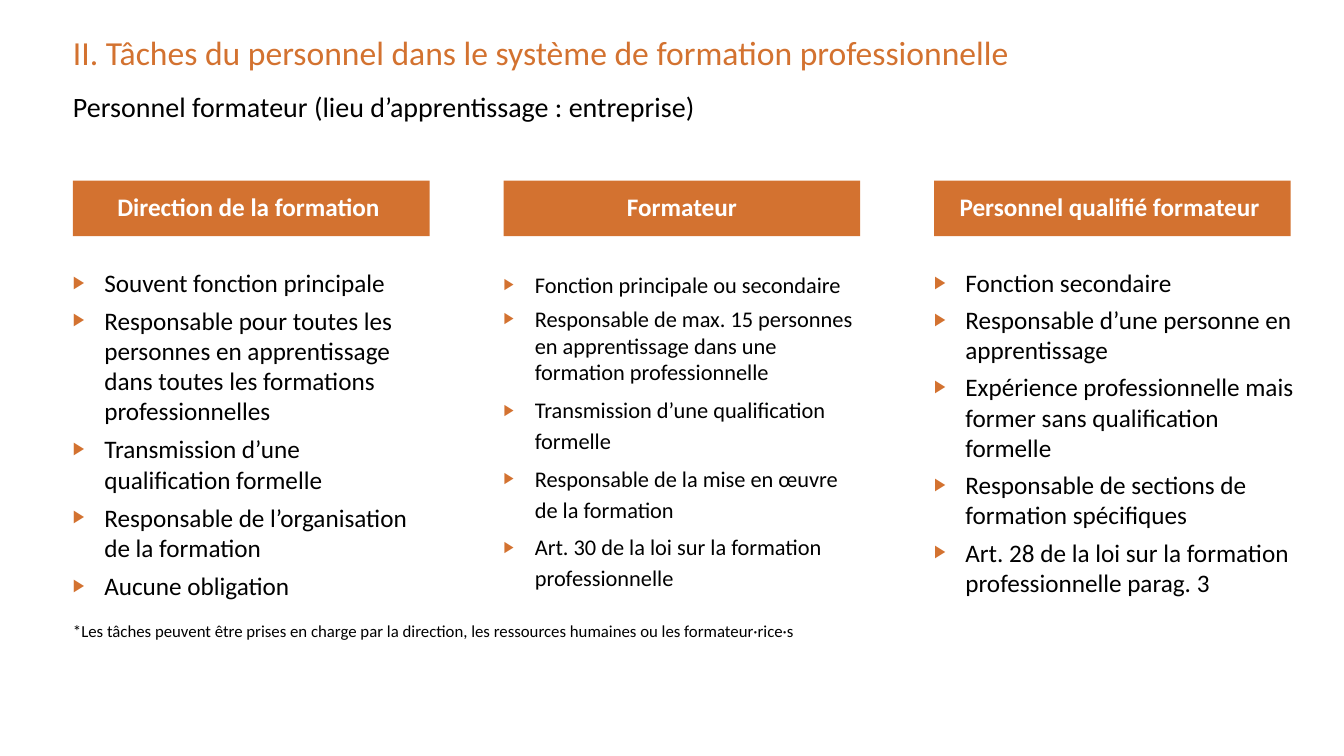
"""Builds the slide on the tasks of training staff in companies."""
from lxml import etree
from pptx import Presentation
from pptx.dml.color import RGBColor
from pptx.enum.shapes import MSO_SHAPE
from pptx.enum.text import MSO_ANCHOR, PP_ALIGN
from pptx.oxml.ns import qn
from pptx.util import Cm, Pt

RECT = MSO_SHAPE.RECTANGLE
MIDDLE = MSO_ANCHOR.MIDDLE
LEFT, CENTER = PP_ALIGN.LEFT, PP_ALIGN.CENTER

COLORS = {"accent": "D37230", "text": "000000", "header": "FFFFFF"}
FONT = "Calibri"

TITLE = "II. Tâches du personnel dans le système de formation professionnelle"
SUBTITLE = "Personnel formateur (lieu d’apprentissage\u00a0: entreprise)"
FOOTNOTE = ("*Les tâches peuvent être prises en charge par la direction, "
            "les ressources humaines ou les formateur·rice·s")

COLUMNS = [
    {"header": "Direction de la formation ", "size": 18, "width": 8.99, "loose": {0, 2, 3, 4},
     "tasks": ["Souvent fonction principale",
               "Responsable pour toutes les personnes en apprentissage "
               "dans toutes les formations professionnelles",
               "Transmission d’une qualification formelle",
               "Responsable de l’organisation de la formation",
               "Aucune obligation"]},
    {"header": "Formateur", "size": 16, "width": 8.99, "loose": {0, 2, 3, 4},
     "tasks": ["Fonction principale ou secondaire",
               "Responsable de max. 15 personnes en apprentissage "
               "dans une formation professionnelle",
               "Transmission d’une qualification formelle",
               "Responsable de la mise en œuvre de la formation",
               "Art. 30 de la loi sur la formation professionnelle"]},
    {"header": "Personnel qualifié formateur ", "size": 18, "width": 9.17, "loose": set(),
     "tasks": ["Fonction secondaire",
               "Responsable d’une personne en apprentissage",
               "Expérience professionnelle mais former sans qualification formelle",
               "Responsable de sections de formation spécifiques",
               "Art. 28 de la loi sur la formation professionnelle parag. 3"]},
]

MARGIN, PITCH, HEADER_WIDTH = 1.84, 10.85, 8.99
HEADER_TOP, HEADER_HEIGHT = 4.55, 1.4
TASKS_TOP, TASKS_HEIGHT = 6.73, 8.1
INDENT = Cm(0.79)


def rgb(name):
    return RGBColor.from_string(COLORS[name])


def fill_text(sp, lines, size, color, bold=False, align=LEFT):
    tf = sp.text_frame
    tf.word_wrap = True
    tf.margin_left = tf.margin_top = tf.margin_right = tf.margin_bottom = 0
    tf.text = "\n".join(lines)
    for p in tf.paragraphs:
        p.alignment = align
        for r in p.runs:
            r.font.name, r.font.size, r.font.bold = FONT, Pt(size), bold
            r.font.color.rgb = rgb(color)
    return tf


def add_text(s, box, lines, size, color="text"):
    sp = s.shapes.add_textbox(*(Cm(v) for v in box))
    return fill_text(sp, lines, size, color)


def add_header(s, left, label):
    box = (left, HEADER_TOP, HEADER_WIDTH, HEADER_HEIGHT)
    sp = s.shapes.add_shape(RECT, *(Cm(v) for v in box))
    sp.shadow.inherit = False
    sp.fill.solid()
    sp.fill.fore_color.rgb = rgb("accent")
    sp.line.fill.background()
    tf = fill_text(sp, [label], 18, "header", True, CENTER)
    tf.vertical_anchor = MIDDLE
    tf.paragraphs[0].line_spacing = 0.9


def add_bullet(p):
    pPr = p._p.get_or_add_pPr()
    pPr.set("marL", str(INDENT))
    pPr.set("indent", str(-INDENT))
    color = etree.SubElement(pPr, qn("a:buClr"))
    etree.SubElement(color, qn("a:srgbClr"), val=COLORS["accent"])
    etree.SubElement(pPr, qn("a:buSzPct"), val="70000")
    etree.SubElement(pPr, qn("a:buFont"), typeface=FONT)
    etree.SubElement(pPr, qn("a:buChar"), char="▶")


def add_tasks(s, left, column):
    box = (left, TASKS_TOP, column["width"], TASKS_HEIGHT)
    tf = add_text(s, box, column["tasks"], column["size"])
    for i, p in enumerate(tf.paragraphs):
        add_bullet(p)
        if i:
            p.space_before = Pt(5)
        if i in column["loose"]:
            p.line_spacing = Pt(22)


def main():
    prs = Presentation()
    prs.slide_width, prs.slide_height = Cm(33.87), Cm(19.05)
    s = prs.slides.add_slide(prs.slide_layouts[6])
    add_text(s, (MARGIN, 0.81, 25, 1.24), [TITLE], 24, "accent")
    add_text(s, (MARGIN, 2.26, 30.7, 0.69), [SUBTITLE], 20)
    for i, column in enumerate(COLUMNS):
        left = MARGIN + i * PITCH
        add_header(s, left, column["header"])
        add_tasks(s, left, column)
    add_text(s, (MARGIN, 15.65, 23.9, 0.51), [FOOTNOTE], 12)
    prs.save("out.pptx")


if __name__ == "__main__":
    main()
